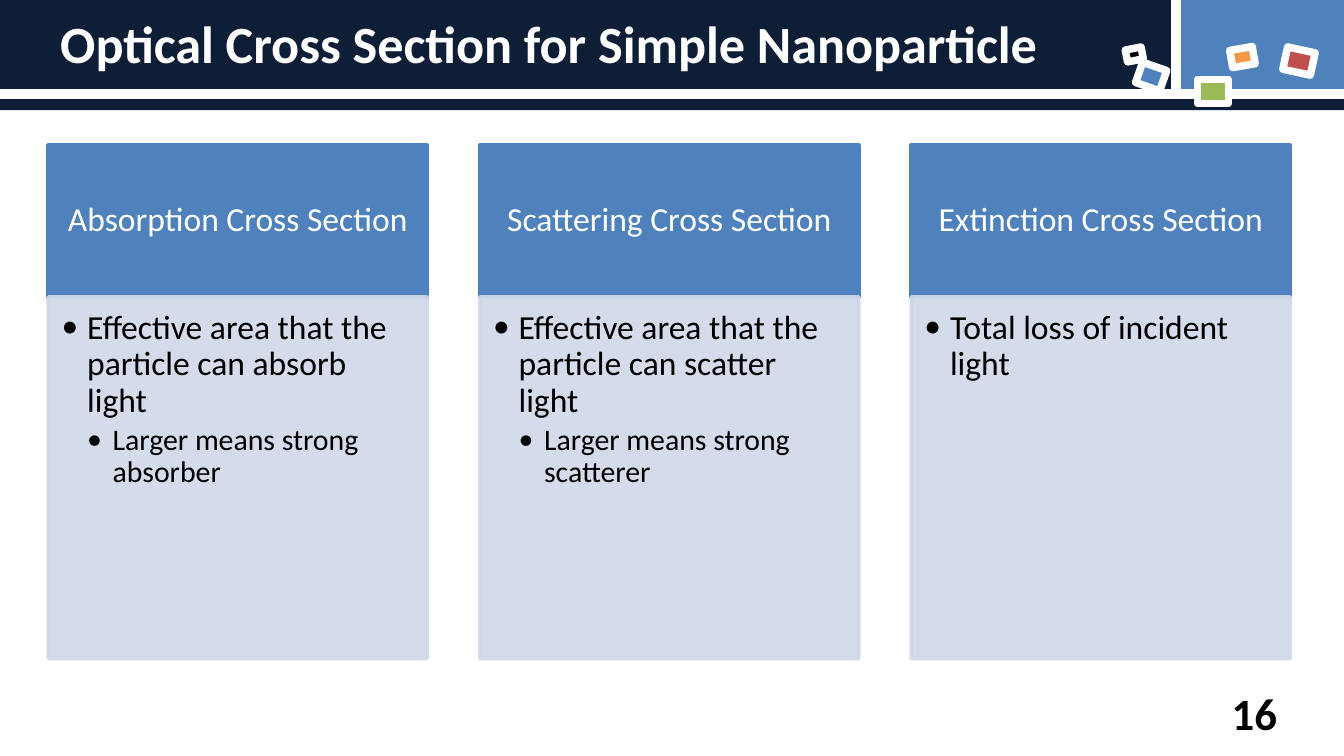
from lxml.etree import SubElement as Sub
from pptx import Presentation
from pptx.dml.color import RGBColor as RGB
from pptx.enum.shapes import MSO_SHAPE as Shape
from pptx.enum.text import MSO_ANCHOR as Anchor, PP_ALIGN as Align
from pptx.oxml.ns import qn
from pptx.util import Inches, Pt

# Content
TITLE = "Optical Cross Section for Simple Nanoparticle"
PAGE = "16"
CARDS = [
    ("Absorption Cross Section",
     ["Effective area that the particle can absorb light", "Larger means strong absorber"]),
    ("Scattering Cross Section",
     ["Effective area that the particle can scatter light", "Larger means strong scatterer"]),
    ("Extinction Cross Section", ["Total loss of incident light"]),
]

THEME = {
    "font": "Calibri",
    "navy": "0F1E37", "blue": "4F81BD", "pale": "D0D8E8", "green": "9BBB59",
    "orange": "F79646", "red": "C0504D", "black": "000000", "white": "FFFFFF",
    "title": 28, "page": 24, "head": 18, "levels": (18, 16),
}

# Wide 16:9 slide
WIDTH = Inches(10)
HEIGHT = WIDTH * 9 // 16

# Banner: left, top, width, height, turn, fill, line width
BANNER = [
    (0, 0.7, 10, 0.12, 0, "navy", 0),
    (-0.16, -0.12, 10.31, 0.82, 0, "navy", 5.75),
    (8.75, -0.12, 1.41, 0.82, 0, "blue", 5.5),
    (8.91, 0.59, 0.23, 0.18, 0, "green", 4),
    (9.16, 0.36, 0.17, 0.13, 350.1, "orange", 4),
    (9.56, 0.37, 0.21, 0.17, 12.3, "red", 4),
    (8.47, 0.49, 0.19, 0.16, 19.3, "blue", 4),
    (8.38, 0.36, 0.12, 0.09, 349, "black", 4),
]

# Card grid
LEFT, TOP, WIDE, STEP = 0.36, 1.08, 2.82, 3.21
HEAD, BODY = 1.13, 2.69
INDENT = 0.19

INSETS = {
    "text": (0.1, 0.05, 0.1, 0.05),
    "head": (0.14, 0.08, 0.14, 0.08),
    "body": (0.1, 0.1, 0.14, 0.16),
}


def tint(name):
    return RGB.from_string(THEME[name])


def apply(item, form):
    for key, val in form.items():
        setattr(item, key, val)


def add_rect(slide, box, fill, line, width, turn=0):
    rect = slide.shapes.add_shape(Shape.RECTANGLE, *map(Inches, box))
    rect.shadow.inherit = False
    rect.rotation = turn
    rect.fill.solid()
    rect.fill.fore_color.rgb = tint(fill)
    if width:
        rect.line.color.rgb = tint(line)
        rect.line.width = Pt(width)
    else:
        rect.line.fill.background()
    return rect


def set_frame(shape, inset, anchor):
    frame = shape.text_frame
    left, top, right, low = map(Inches, INSETS[inset])
    apply(frame, {"word_wrap": True, "vertical_anchor": anchor,
                  "margin_left": left, "margin_top": top,
                  "margin_right": right, "margin_bottom": low})
    return frame


def write(para, text, size, color, bold=False, **form):
    apply(para, form)
    run = para.add_run()
    run.text = text
    apply(run.font, {"name": THEME["font"], "size": Pt(size), "bold": bold})
    run.font.color.rgb = tint(color)


def add_label(slide, box, text, size, color, align):
    label = slide.shapes.add_textbox(*map(Inches, box))
    frame = set_frame(label, "text", Anchor.MIDDLE)
    write(frame.paragraphs[0], text, size, color, True, alignment=align)


def add_bullet(para, level):
    props = para._p.get_or_add_pPr()
    props.set("marL", str(Inches(INDENT * (level + 1))))
    props.set("indent", str(-Inches(INDENT)))
    hue = Sub(props, qn("a:buClr"))
    Sub(hue, qn("a:srgbClr"), val=THEME["black"])
    Sub(props, qn("a:buFont"), typeface=THEME["font"])
    Sub(props, qn("a:buChar"), char="•")


def add_card(slide, left, head, points):
    # Heading
    rect = add_rect(slide, (left, TOP, WIDE, HEAD), "blue", "blue", 2)
    frame = set_frame(rect, "head", Anchor.MIDDLE)
    write(frame.paragraphs[0], head, THEME["head"], "white",
          alignment=Align.CENTER, line_spacing=0.9)

    # Body with one point per level
    rect = add_rect(slide, (left, TOP + HEAD, WIDE, BODY), "pale", "pale", 2)
    for color in rect._element.spPr.iter(qn("a:srgbClr")):
        Sub(color, qn("a:alpha"), val="90000")
    frame = set_frame(rect, "body", Anchor.TOP)
    for level, text in enumerate(points):
        para = frame.add_paragraph() if level else frame.paragraphs[0]
        add_bullet(para, level)
        write(para, text, THEME["levels"][level], "black", level=level + 1,
              alignment=Align.LEFT, line_spacing=0.9, space_after=Pt(3))


def main():
    deck = Presentation()
    apply(deck, {"slide_width": WIDTH, "slide_height": HEIGHT})
    slide = deck.slides.add_slide(deck.slide_layouts[6])

    for *box, turn, fill, width in BANNER:
        add_rect(slide, box, fill, "white", width, turn)
    add_label(slide, (0.35, 0, 7.93, 0.64), TITLE, THEME["title"], "white", Align.LEFT)
    add_label(slide, (7.27, 5.15, 2.33, 0.3), PAGE, THEME["page"], "black", Align.RIGHT)

    for col, (head, points) in enumerate(CARDS):
        add_card(slide, LEFT + col * STEP, head, points)
    deck.save("out.pptx")


if __name__ == "__main__":
    main()
